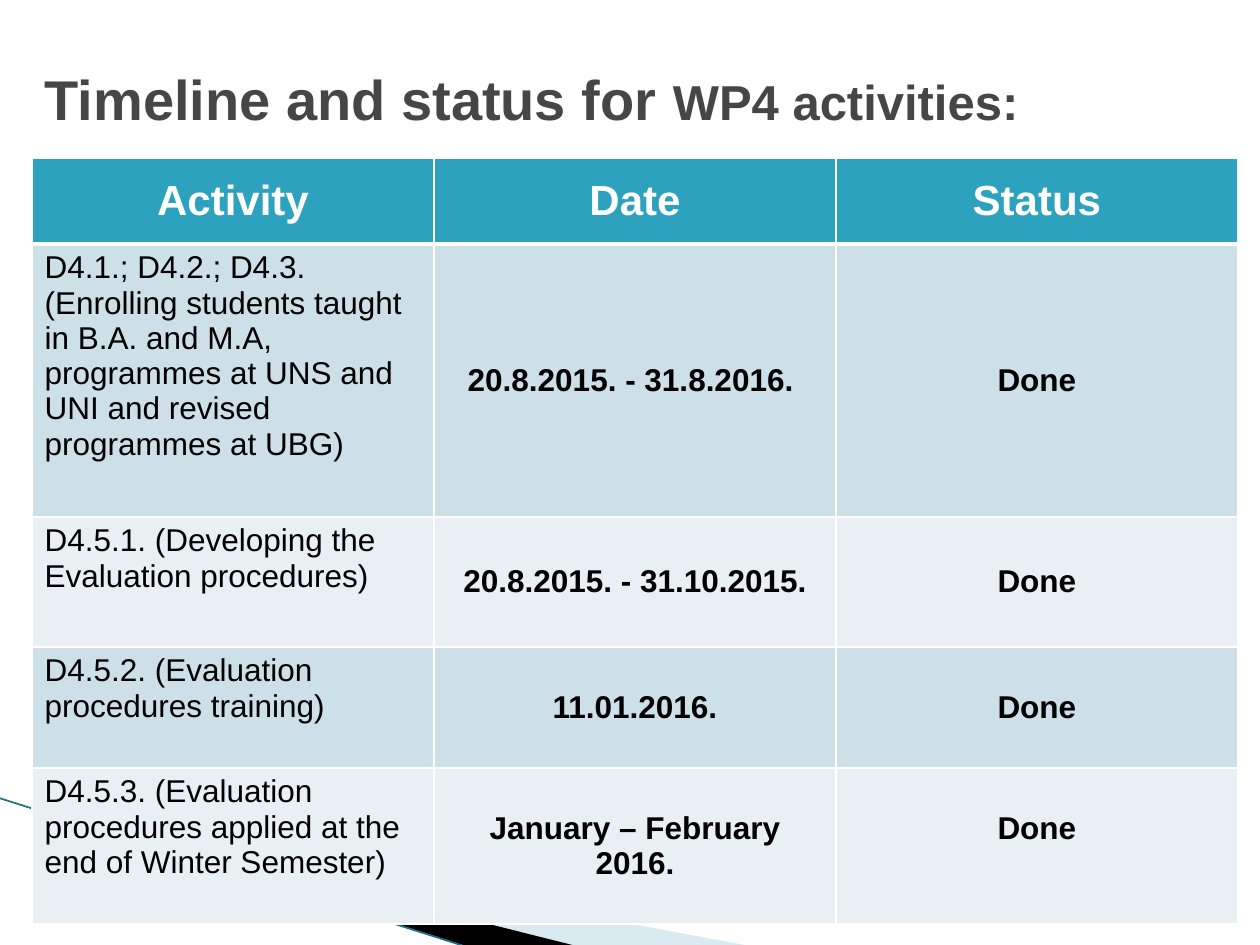
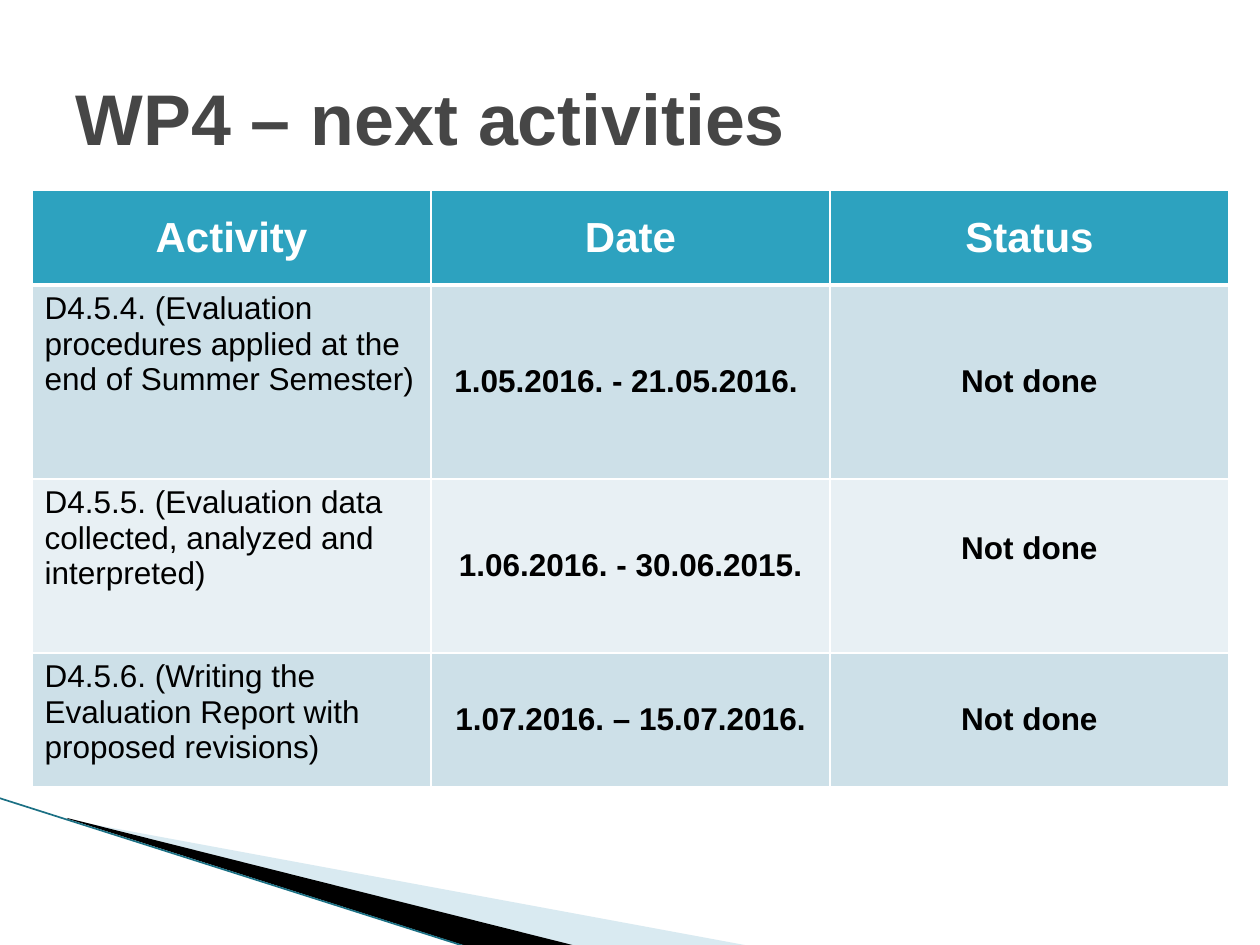
from lxml.etree import SubElement
from pptx import Presentation
from pptx.dml.color import RGBColor
from pptx.enum.shapes import MSO_CONNECTOR
from pptx.enum.text import MSO_ANCHOR, MSO_AUTO_SIZE, PP_ALIGN
from pptx.oxml.ns import qn
from pptx.util import Pt

PX = 914400 / 126
WHITE = RGBColor(0xFF, 0xFF, 0xFF)
BLACK = RGBColor(0x00, 0x00, 0x00)
TITLE_GREY = RGBColor(0x46, 0x46, 0x46)
HEADER_TEAL = RGBColor(0x2D, 0xA2, 0xBF)
BAND_DARK = RGBColor(0xCD, 0xE0, 0xE8)
BAND_LIGHT = RGBColor(0xE8, 0xF0, 0xF4)
WEDGE_BLUE = RGBColor(0xA0, 0xCB, 0xDC)
EDGE_TEAL = RGBColor(0x1B, 0x70, 0x84)

HEADINGS = ("Activity", "Date", "Status")
WEDGES = [
    (WEDGE_BLUE, 40, [(69, 820), (750, 946), (575, 946), (69, 819)]),
    (BLACK, 100, [(67, 818), (576, 946), (469, 947), (68, 819)]),
]
# Each row: height, activity, date, status, extra space below the status
SLIDES = [
    dict(
        title=[("Timeline and status for ", 32), ("WP4 activities:", 28)],
        title_box=(32, 38, 1197, 120), top=158, col_width=402, header=86,
        rows=[
            (273, "D4.1.; D4.2.; D4.3. (Enrolling students taught in B.A. and M.A, "
                  "programmes at UNS and UNI and revised programmes at UBG)",
             "20.8.2015. - 31.8.2016. ", "Done", 0),
            (130, "D4.5.1. (Developing the Evaluation procedures)",
             "20.8.2015. - 31.10.2015.", "Done", 0),
            (121, "D4.5.2. (Evaluation procedures training)", "11.01.2016.", "Done", 0),
            (156, "D4.5.3. (Evaluation procedures applied at the end of Winter Semester)",
             "January – February 2016.", "Done", 35),
        ]),
    dict(
        title=[("WP4 – next activities", 41)],
        title_box=(63, 38, 1134, 158), top=190, col_width=399, header=95,
        rows=[
            (194, "D4.5.4. (Evaluation procedures applied at the end of Summer Semester)",
             "1.05.2016. - 21.05.2016. ", "Not done", 0),
            (174, "D4.5.5. (Evaluation data collected, analyzed and interpreted)",
             "1.06.2016. - 30.06.2015.", "Not done", 35),
            (134, "D4.5.6. (Writing the Evaluation Report with proposed revisions)",
             "1.07.2016. – 15.07.2016.", "Not done", 0),
        ]),
]


def px(n):
    return round(n * PX)


def write(p, text, size=18, color=BLACK, bold=True, align=PP_ALIGN.CENTER):
    p.alignment = align
    r = p.add_run()
    r.text = text
    r.font.name, r.font.size, r.font.bold = "Arial", Pt(size), bold
    r.font.color.rgb = color


prs = Presentation()
prs.slide_width, prs.slide_height = px(1260), px(945)

for data in SLIDES:
    s = prs.slides.add_slide(prs.slide_layouts[5])

    # Corner wedges
    for color, opacity, points in WEDGES:
        builder = s.shapes.build_freeform(*points[0], scale=PX)
        builder.add_line_segments(points[1:], close=True)
        sp = builder.convert_to_shape()
        sp.shadow.inherit = False
        sp.fill.solid()
        sp.fill.fore_color.rgb = color
        sp.line.fill.background()
        if opacity < 100:
            clr = sp.fill._xPr.find(qn("a:solidFill"))[0]
            SubElement(clr, qn("a:alpha"), val=str(opacity * 1000))

    # Edge line
    edge = s.shapes.add_connector(MSO_CONNECTOR.STRAIGHT, px(-1), px(798), px(467), px(947))
    edge.line.color.rgb = EDGE_TEAL
    edge.line.width = Pt(0.95)
    SubElement(edge._element.spPr, qn("a:effectLst"))

    # Title
    title = s.shapes.title
    title.left, title.top, title.width, title.height = map(px, data["title_box"])
    tf = title.text_frame
    tf.auto_size = MSO_AUTO_SIZE.NONE
    tf.vertical_anchor = MSO_ANCHOR.MIDDLE
    for text, size in data["title"]:
        write(tf.paragraphs[0], text, size=size, color=TITLE_GREY, align=PP_ALIGN.LEFT)

    # Activity table
    rows = [(data["header"], *HEADINGS, 0)] + data["rows"]
    height = sum(row[0] for row in rows)
    table = s.shapes.add_table(len(rows), 3, px(32), px(data["top"]),
                               px(3 * data["col_width"]), px(height)).table
    for column in table.columns:
        column.width = px(data["col_width"])
    for i, (row_height, *texts, space_below) in enumerate(rows):
        table.rows[i].height = px(row_height)
        for j, text in enumerate(texts):
            cell = table.cell(i, j)
            is_header, is_activity = i == 0, i > 0 and j == 0
            cell.vertical_anchor = MSO_ANCHOR.TOP if is_activity else MSO_ANCHOR.MIDDLE
            if j == 2 and space_below:
                cell.margin_bottom = px(6 + space_below)

            # White borders, thick under the header
            tcPr = cell._tc.get_or_add_tcPr()
            for side in "LRTB":
                thick = (i, side) in ((0, "B"), (1, "T"))
                ln = SubElement(tcPr, qn(f"a:ln{side}"), w=str(Pt(3 if thick else 1)))
                SubElement(SubElement(ln, qn("a:solidFill")), qn("a:srgbClr"), val=str(WHITE))
            cell.fill.solid()
            cell.fill.fore_color.rgb = (
                HEADER_TEAL if is_header else BAND_DARK if i % 2 else BAND_LIGHT)

            write(cell.text_frame.paragraphs[0], text,
                  size=24 if is_header else 18,
                  color=WHITE if is_header else BLACK,
                  bold=not is_activity,
                  align=PP_ALIGN.LEFT if is_activity else PP_ALIGN.CENTER)

prs.save("out.pptx")
